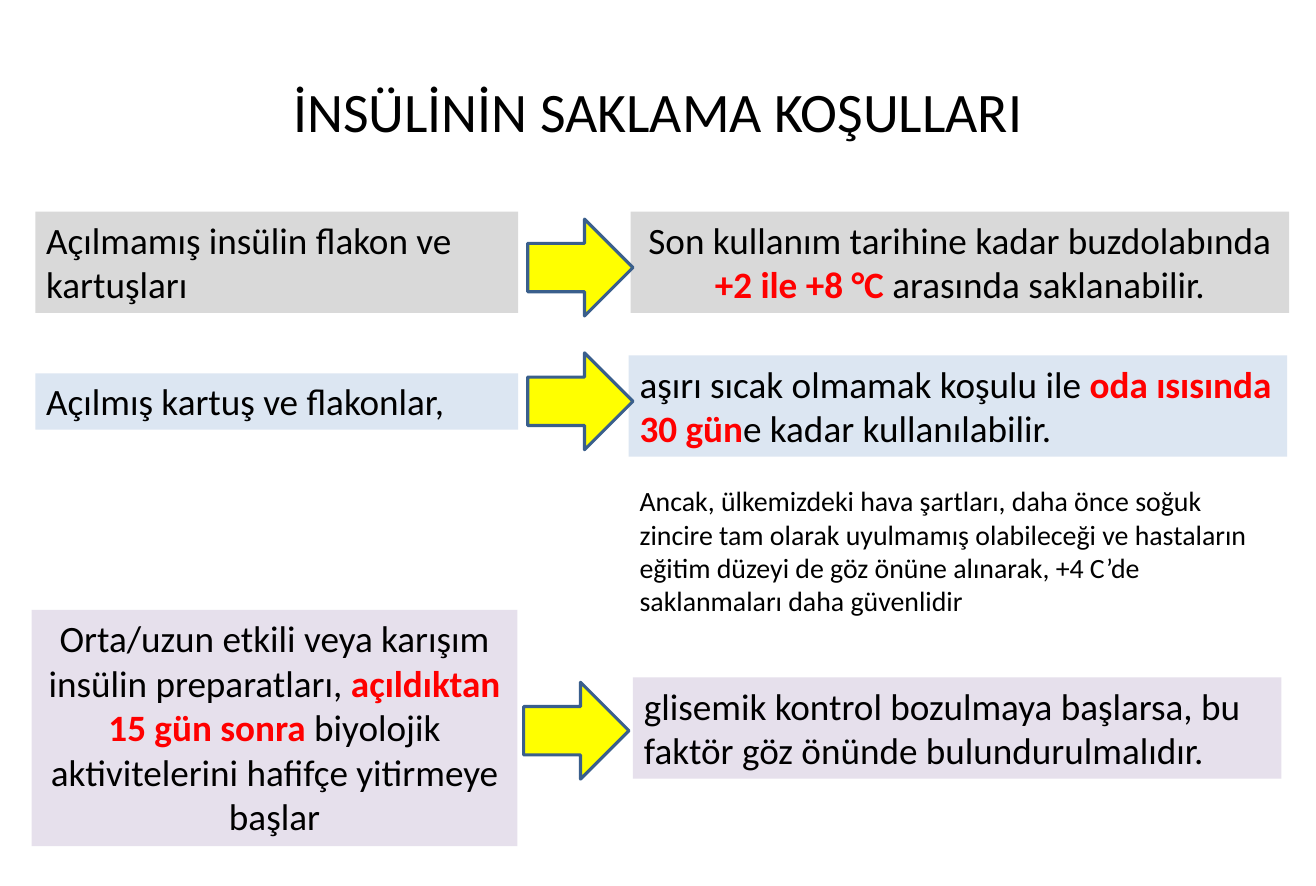
import pptx
import pptx.util
import pptx.dml.color
import pptx.enum.shapes
import pptx.enum.text

Pt = pptx.util.Pt
RGBColor = pptx.dml.color.RGBColor
ALIGN = pptx.enum.text.PP_ALIGN
ANCHOR = pptx.enum.text.MSO_ANCHOR

BLACK = RGBColor(0x00, 0x00, 0x00)
RED = RGBColor(0xFF, 0x00, 0x00)
GREY = RGBColor(0xD9, 0xD9, 0xD9)
BLUE = RGBColor(0xDC, 0xE6, 0xF2)
LILAC = RGBColor(0xE6, 0xE0, 0xEC)
YELLOW = RGBColor(0xFF, 0xFF, 0x00)
NAVY = RGBColor(0x3A, 0x5F, 0x8C)


def write(frame, text, size=24, align=ALIGN.LEFT, anchor=ANCHOR.TOP):
    """Fill a text frame; words between asterisks become bold red."""
    frame.word_wrap = True
    frame.vertical_anchor = anchor
    par = frame.paragraphs[0]
    par.alignment = align
    for i, part in enumerate(text.split("*")):
        run = par.add_run()
        run.text = part
        font = run.font
        font.name = "Calibri"
        font.size = Pt(size)
        font.bold = i % 2 == 1
        font.color.rgb = RED if font.bold else BLACK


class Page:
    def __init__(self, deck):
        self.slide = deck.slides.add_slide(deck.slide_layouts[5])
        self.shapes = self.slide.shapes

    def title(self, text, *area):
        head = self.shapes.title
        head.left, head.top, head.width, head.height = map(Pt, area)
        write(head.text_frame, text, size=36, align=ALIGN.CENTER,
              anchor=ANCHOR.MIDDLE)

    def box(self, text, *area, fill=None, **style):
        box = self.shapes.add_textbox(*map(Pt, area))
        if fill is not None:
            box.fill.solid()
            box.fill.fore_color.rgb = fill
        write(box.text_frame, text, **style)
        box.text_frame.auto_size = pptx.enum.text.MSO_AUTO_SIZE.SHAPE_TO_FIT_TEXT

    def arrow(self, left, top):
        kind = pptx.enum.shapes.MSO_SHAPE.RIGHT_ARROW
        arrow = self.shapes.add_shape(kind, Pt(left), Pt(top), Pt(68), Pt(62.6))
        arrow.shadow.inherit = False
        arrow.fill.solid()
        arrow.fill.fore_color.rgb = YELLOW
        arrow.line.color.rgb = NAVY
        arrow.line.width = Pt(2)


def main():
    deck = pptx.Presentation()
    deck.slide_width, deck.slide_height = Pt(850.4), Pt(572.4)
    page = Page(deck)
    page.title("İNSÜLİNİN SAKLAMA KOŞULLARI", 42.5, 23, 765.4, 95.8)

    page.box("Açılmamış insülin flakon ve kartuşları",
             22.8, 136.8, 312, 65.4, fill=GREY)
    page.box("Son kullanım tarihine kadar buzdolabında "
             "*+2 ile +8 °C *arasında saklanabilir.",
             407.5, 136.8, 425.5, 65.4, fill=GREY, align=ALIGN.CENTER)

    page.box("Açılmış kartuş ve flakonlar,", 22.8, 241.2, 312, 36.3, fill=BLUE)
    page.box("aşırı sıcak olmamak koşulu ile *oda ısısında 30 gün*e kadar "
             "kullanılabilir.", 406.2, 229.6, 425.5, 65.4, fill=BLUE)
    page.box("Ancak, ülkemizdeki hava şartları, daha önce soğuk zincire tam "
             "olarak uyulmamış olabileceği ve hastaların eğitim düzeyi de göz "
             "önüne alınarak, +4 C’de saklanmaları daha güvenlidir",
             406.2, 309, 425.5, 94.5, size=18)

    page.box("Orta/uzun etkili veya karışım insülin preparatları, "
             "*açıldıktan 15 gün sonra *biyolojik aktivitelerini hafifçe "
             "yitirmeye başlar",
             20.4, 394, 314, 152.7, fill=LILAC, align=ALIGN.CENTER)
    page.box("glisemik kontrol bozulmaya başlarsa, bu faktör göz önünde "
             "bulundurulmalıdır.", 409, 437.6, 419, 65.4, fill=LILAC)

    for left, top in (341, 141.6), (341, 228), (338.4, 440.8):
        page.arrow(left, top)
    deck.save("out.pptx")


if __name__ == "__main__":
    main()
